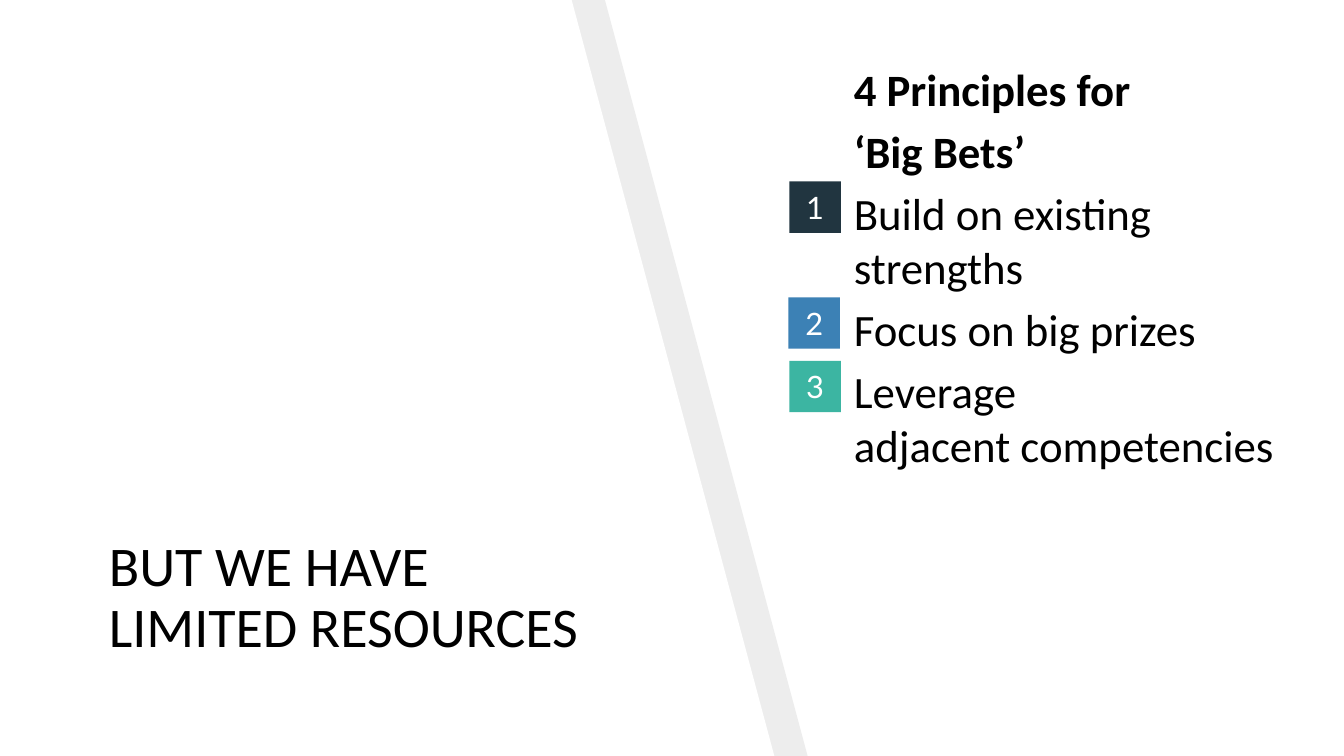
from dataclasses import dataclass

from pptx import Presentation
from pptx.dml.color import RGBColor
from pptx.enum.shapes import MSO_SHAPE
from pptx.enum.text import MSO_ANCHOR, PP_ALIGN
from pptx.shapes.base import BaseShape
from pptx.slide import Slide
from pptx.text.text import TextFrame
from pptx.util import Emu, Pt

SCALE = 9144  # EMU in one px, 100 px to the inch
WIDTH, HEIGHT = 1333, 750


@dataclass(frozen=True)
class Theme:
    ink: str = "000000"
    paper: str = "FFFFFF"
    band: str = "EDEDED"
    font: str = "Calibri"
    badge_font: str = "Lato"
    title: int = 40
    body: int = 32
    badge: int = 22


@dataclass(frozen=True)
class Panel:
    left: int
    color: str


@dataclass(frozen=True)
class Badge:
    label: str
    left: int
    top: int
    color: str


@dataclass(frozen=True)
class Line:
    text: str
    bold: bool = False


THEME = Theme()
PANELS = [Panel(33, THEME.band), Panel(0, THEME.paper)]
BADGES = [
    Badge("1", 783, 180, "213540"),
    Badge("2", 782, 295, "3C81B5"),
    Badge("3", 783, 358, "3CB5A2"),
]
TITLE = [Line("BUT WE HAVE LIMITED RESOURCES")]
LINES = [
    Line("4 Principles for", True),
    Line("‘Big Bets’", True),
    Line("Build on existing strengths"),
    Line("Focus on big prizes"),
    Line("Leverage\nadjacent competencies"),
]


def px(size: int) -> Emu:
    return Emu(size * SCALE)


def rgb(color: str) -> RGBColor:
    return RGBColor.from_string(color)


def paint(shape: BaseShape, color: str) -> None:
    shape.shadow.inherit = False
    shape.fill.solid()
    shape.fill.fore_color.rgb = rgb(color)
    shape.line.fill.background()


def add_panel(slide: Slide, panel: Panel) -> None:
    """Draw a full-height panel with a slanted right edge."""
    left = panel.left
    pen = slide.shapes.build_freeform(left, 0, scale=SCALE)
    pen.add_line_segments([(left, HEIGHT), (left + 768, HEIGHT), (left + 567, 0)])
    paint(pen.convert_to_shape(), panel.color)


def add_text(slide: Slide, box: tuple[int, int, int, int], inset: int,
             lines: list[Line], size: int) -> TextFrame:
    frame = slide.shapes.add_textbox(*map(px, box)).text_frame
    frame.word_wrap = True
    frame.margin_left = frame.margin_right = px(inset)
    frame.margin_top = frame.margin_bottom = px(inset)
    for index, line in enumerate(lines):
        para = frame.paragraphs[0] if index == 0 else frame.add_paragraph()
        para.text = line.text
        para.font.name = THEME.font
        para.font.size = Pt(size)
        para.font.bold = line.bold
        para.font.color.rgb = rgb(THEME.ink)
    return frame


def add_badge(slide: Slide, badge: Badge) -> None:
    box = (badge.left, badge.top, 51, 51)
    shape = slide.shapes.add_shape(MSO_SHAPE.RECTANGLE, *map(px, box))
    paint(shape, badge.color)
    frame = shape.text_frame
    frame.vertical_anchor = MSO_ANCHOR.MIDDLE
    para = frame.paragraphs[0]
    para.text = badge.label
    para.alignment = PP_ALIGN.CENTER
    para.font.name = THEME.badge_font
    para.font.size = Pt(THEME.badge)
    para.font.color.rgb = rgb(THEME.paper)


def main() -> None:
    deck = Presentation()
    deck.slide_width, deck.slide_height = px(WIDTH), px(HEIGHT)
    slide = deck.slides.add_slide(deck.slide_layouts[6])
    for panel in PANELS:
        add_panel(slide, panel)

    title = add_text(slide, (95, 231, 514, 436), 13, TITLE, THEME.title)
    title.vertical_anchor = MSO_ANCHOR.BOTTOM
    title.paragraphs[0].line_spacing = 0.9

    body = add_text(slide, (837, 51, 452, 645), 10, LINES, THEME.body)
    for para in body.paragraphs:
        para.space_after = Pt(6)

    for badge in BADGES:
        add_badge(slide, badge)
    deck.save("out.pptx")


if __name__ == "__main__":
    main()
